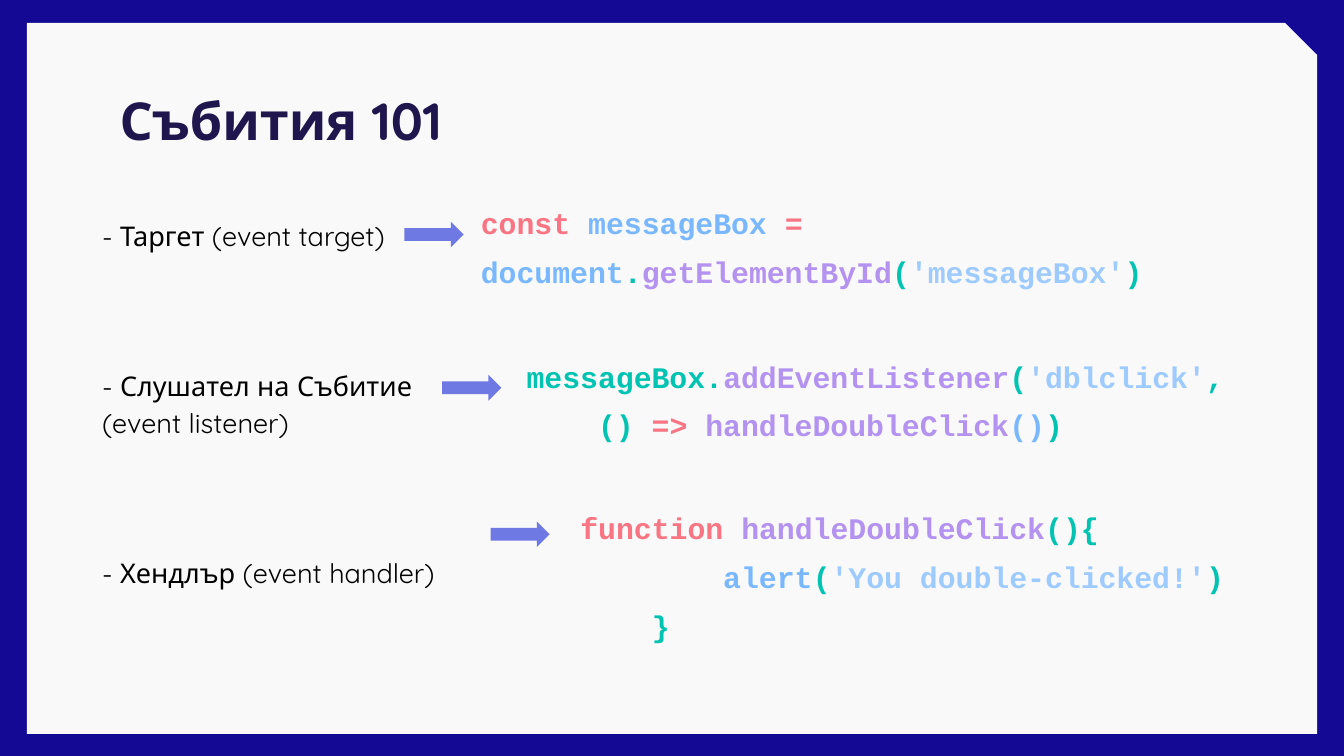
from dataclasses import dataclass

from pptx import Presentation
from pptx.dml.color import RGBColor
from pptx.enum.shapes import MSO_SHAPE
from pptx.enum.text import MSO_ANCHOR, MSO_AUTO_SIZE, PP_ALIGN
from pptx.shapes.autoshape import Shape
from pptx.slide import Slide
from pptx.text.text import TextFrame
from pptx.util import Inches, Pt

NAVY = RGBColor(0x13, 0x09, 0x94)
PAPER = RGBColor(0xF9, 0xF9, 0xF9)
TITLE_INK = RGBColor(0x1F, 0x16, 0x4D)
BLACK = RGBColor(0x00, 0x00, 0x00)
ARROW = RGBColor(0x6F, 0x79, 0xE3)
KEYWORD = RGBColor(0xF9, 0x75, 0x83)
NAME = RGBColor(0x79, 0xB8, 0xFF)
MARK = RGBColor(0x00, 0xC3, 0xB1)
CALL = RGBColor(0xB3, 0x92, 0xF0)
STRING = RGBColor(0x9E, 0xCB, 0xFF)

TEXT_FONT = "Quicksand"
CODE_FONT = "Courier New"

Token = tuple[str, RGBColor]


@dataclass(frozen=True)
class Area:
    left: float
    top: float
    width: float
    height: float

    def lengths(self) -> tuple[int, int, int, int]:
        return Inches(self.left), Inches(self.top), Inches(self.width), Inches(self.height)


@dataclass(frozen=True)
class CodeStep:
    label: str
    arrow_left: float
    arrow_top: float
    area: Area
    lines: list[list[Token]]


STEPS = [
    CodeStep("- Таргет (event target)", 3.01, 1.65, Area(3.48, 1.33, 5.68, 0.84), [
        [("const ", KEYWORD), ("messageBox ", NAME), ("= ", KEYWORD), ("document", NAME),
         (".", MARK), ("getElementById", CALL), ("(", MARK), ("'messageBox'", STRING),
         (")", MARK)],
    ]),
    CodeStep("- Слушател на Събитие (event listener)", 3.29, 2.79, Area(3.82, 2.47, 5.56, 0.84), [
        [("messageBox.", MARK), ("addEventListener", CALL), ("(", MARK),
         ("'dblclick'", STRING), (",", MARK)],
        [("    () ", MARK), ("=> ", KEYWORD), ("handleDoubleClick", CALL), ("()", NAME),
         (")", MARK)],
    ]),
    CodeStep("- Хендлър (event handler)", 3.65, 3.88, Area(4.22, 3.6, 5.5, 1.2), [
        [("function ", KEYWORD), ("handleDoubleClick", CALL), ("(){", MARK)],
        [("        alert", NAME), ("(", MARK), ("'You double-clicked!'", STRING), (")", MARK)],
        [("    }", MARK)],
    ]),
]


def prepare_frame(frame: TextFrame) -> None:
    frame.word_wrap = True
    frame.auto_size = MSO_AUTO_SIZE.NONE
    frame.vertical_anchor = MSO_ANCHOR.TOP
    frame.margin_left = frame.margin_right = Inches(0.1)
    frame.margin_top = frame.margin_bottom = Inches(0.1)


def fill_placeholder(box: Shape, area: Area, lines: list[str], size: float,
                     color: RGBColor, bold: bool, gap: float) -> None:
    box.left, box.top, box.width, box.height = area.lengths()
    frame = box.text_frame
    prepare_frame(frame)
    frame.text = "\n".join(lines)
    for index, para in enumerate(frame.paragraphs):
        para.alignment = PP_ALIGN.LEFT
        para.line_spacing = 1.15
        para.space_before = Pt(gap if index else 0)
        para.font.name = TEXT_FONT
        para.font.size = Pt(size)
        para.font.bold = bold
        para.font.color.rgb = color


def add_solid(page: Slide, kind: MSO_SHAPE, area: Area, color: RGBColor) -> Shape:
    shape = page.shapes.add_shape(kind, *area.lengths())
    shape.shadow.inherit = False
    shape.fill.solid()
    shape.fill.fore_color.rgb = color
    shape.line.fill.background()
    return shape


def add_code(page: Slide, area: Area, lines: list[list[Token]]) -> None:
    frame = page.shapes.add_textbox(*area.lengths()).text_frame
    prepare_frame(frame)
    for index, tokens in enumerate(lines):
        para = frame.add_paragraph() if index else frame.paragraphs[0]
        para.line_spacing = 1.36
        para.font.name = CODE_FONT
        para.font.size = Pt(16)
        para.font.bold = True
        for text, color in tokens:
            span = para.add_run()
            span.text = text
            span.font.color.rgb = color


def main() -> None:
    deck = Presentation()
    deck.slide_width = Inches(10)
    deck.slide_height = deck.slide_width * 9 // 16
    page = deck.slides.add_slide(deck.slide_layouts[0])
    page.background.fill.solid()
    page.background.fill.fore_color.rgb = NAVY

    title, labels = page.placeholders
    panel = add_solid(page, MSO_SHAPE.SNIP_1_RECTANGLE, Area(0.2, 0.17, 9.6, 5.29), PAPER)
    panel.adjustments[0] = 0.045
    title.element.addprevious(panel.element)

    fill_placeholder(title, Area(0.79, 0.49, 8.43, 0.63), ["Събития 101"],
                     28, TITLE_INK, True, 0)
    fill_placeholder(labels, Area(0.66, 1.5, 2.86, 2.87), [step.label for step in STEPS],
                     14.5, BLACK, False, 60)
    for step in STEPS:
        add_solid(page, MSO_SHAPE.RIGHT_ARROW,
                  Area(step.arrow_left, step.arrow_top, 0.44, 0.19), ARROW)
        add_code(page, step.area, step.lines)

    deck.save("out.pptx")


if __name__ == "__main__":
    main()
